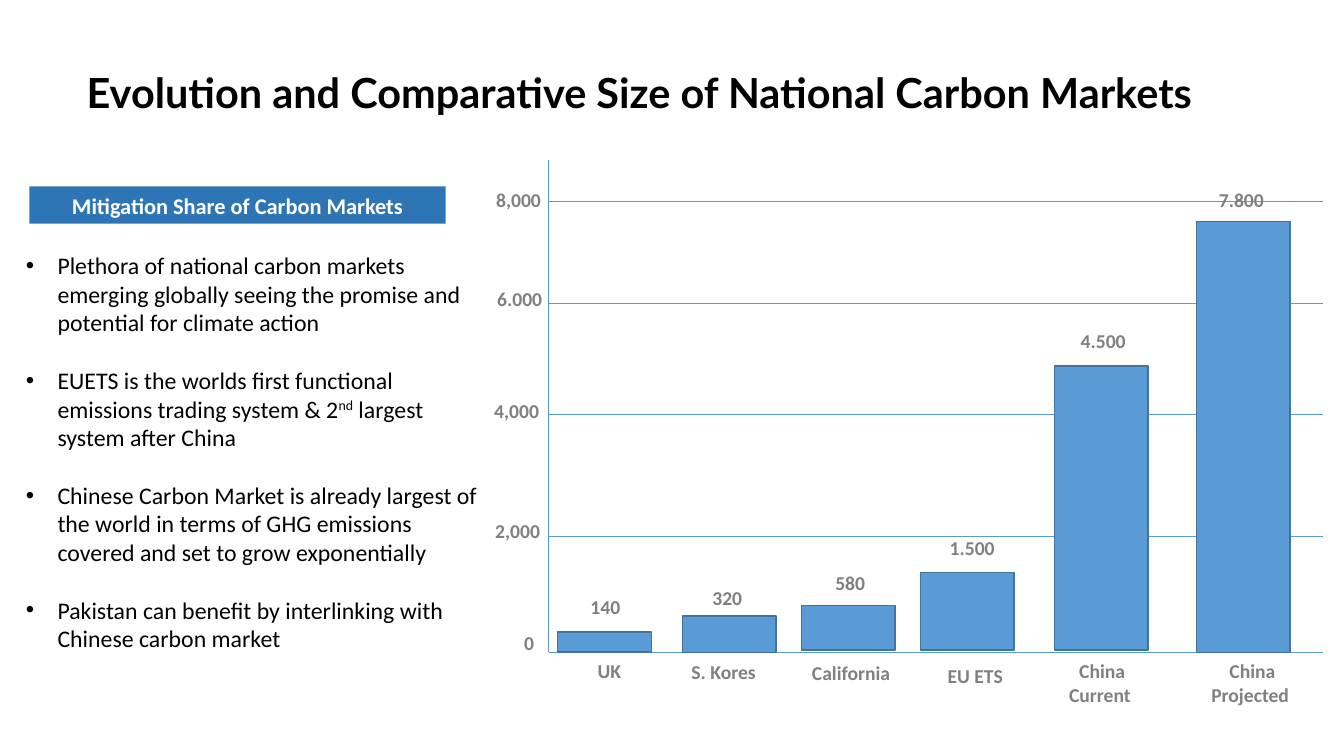
from lxml import etree
from pptx import Presentation
from pptx.dml.color import RGBColor
from pptx.enum.shapes import MSO_CONNECTOR as CONN, MSO_SHAPE as SHAPE
from pptx.enum.text import MSO_ANCHOR as ANCHOR, PP_ALIGN as ALIGN
from pptx.oxml.ns import qn
from pptx.util import Pt

COLORS = {"black": "000000", "white": "FFFFFF", "gray": "808080",
          "bar": "5B9BD5", "bar_edge": "43739E", "banner": "2E75B6"}

TITLE = dict(name="Lato", size=Pt(29.6), bold=True)
LABEL = dict(name="Calibri", size=Pt(14), bold=True)
BANNER = dict(name="Calibri", size=Pt(16), bold=True)
BODY = dict(name="Calibri", size=Pt(17), bold=False)

# label, gridline y, label centre x, label top; relative to the chart box
TICKS = [("0", 352, -14, 333), ("2,000", 269, -22.3, 253.2),
         ("4,000", 182, -23, 167.5), ("6.000", 102.7, -20.8, 87.6),
         ("8,000", 30, -21.6, 17)]

# name, value, bar (left, top, height), value (shift, top), name (shift, top, width);
# shifts are from the middle of the bar
BAR_W = 67
BARS = [
    ("UK", "140", (6.2, 337.4, 14.4), (0.7, 307.2), (3.5, 353.3, 65.5)),
    ("S. Kores", "320", (95.4, 326, 26), (-1.4, 300.7), (-4, 354, 108)),
    ("California", "580", (180.4, 318.7, 31.7), (1.4, 290.6), (2, 354.7, 93)),
    ("EU ETS", "1.500", (265.4, 295, 55.4), (3.5, 265.4), (5.7, 356.9, 65.5)),
    ("China Current ", "4.500", (361.1, 147.4, 203), (1.4, 117.1), (0.7, 353.3, 93)),
    ("China Projected ", "7.800", (462.6, 44.4, 307.6), (-1.4, 17), (6.5, 353.3, 93)),
]

# each bullet is a list of (text, superscript) runs
BULLETS = [
    [("Plethora of national carbon markets emerging globally seeing the promise "
      "and potential for climate action", False)],
    [("EUETS is the worlds first functional emissions trading system & 2", False),
     ("nd", True), (" largest system after China", False)],
    [("Chinese Carbon Market is already largest of the world in terms of GHG "
      "emissions covered and set to grow exponentially", False)],
    [("Pakistan can benefit by interlinking with Chinese carbon market", False)],
]


def rgb(key):
    return RGBColor.from_string(COLORS[key])


def points(*lengths):
    return [Pt(v) for v in lengths]


def style(font, color, fmt):
    for key, value in fmt.items():
        setattr(font, key, value)
    font.color.rgb = rgb(color)


def add_label(slide, text, center, top, width):
    """Gray one-paragraph text centred on a given x."""
    sp = slide.shapes.add_textbox(*points(center - width / 2, top, width, 24.3))
    tf = sp.text_frame
    tf.word_wrap = True
    p = tf.paragraphs[0]
    p.text, p.alignment = text, ALIGN.CENTER
    style(p.runs[0].font, "gray", LABEL)


def add_line(slide, x1, y1, x2, y2):
    line = slide.shapes.add_connector(CONN.STRAIGHT, *points(x1, y1, x2, y2))
    line.line.color.rgb = rgb("bar")
    line.line.width = Pt(0.5)
    etree.SubElement(line._element.spPr, qn("a:effectLst"))


def add_rect(slide, box, fill, edge=None):
    sp = slide.shapes.add_shape(SHAPE.RECTANGLE, *points(*box))
    sp.shadow.inherit = False
    sp.fill.solid()
    sp.fill.fore_color.rgb = rgb(fill)
    if edge:
        sp.line.color.rgb = rgb(edge)
        sp.line.width = Pt(1)
    else:
        sp.line.fill.background()
    return sp


def add_title(slide, x, y, w, h):
    sp = slide.shapes.title
    sp.left, sp.top, sp.width, sp.height = points(x, y, w, h)
    tf = sp.text_frame
    frame = dict(word_wrap=True, vertical_anchor=ANCHOR.BOTTOM, margin_top=0,
                 margin_bottom=0, margin_left=Pt(7.2), margin_right=Pt(7.2))
    for key, value in frame.items():
        setattr(tf, key, value)
    p = tf.paragraphs[0]
    p.text = "Evolution and Comparative Size of National Carbon Markets"
    p.alignment, p.line_spacing = ALIGN.LEFT, 0.9
    style(p.runs[0].font, "black", TITLE)


def add_bar_chart(slide, x, y, w, h):
    """Bars drawn to an uneven scale, so each keeps its own place in the box."""
    add_line(slide, x, y, x, y + h)
    for text, line_y, center, top in TICKS:
        add_line(slide, x, y + line_y, x + w, y + line_y)
        add_label(slide, text, x + center, y + top, 57)
    for name, value, bar, value_at, name_at in BARS:
        left, top, height = bar
        add_rect(slide, (x + left, y + top, BAR_W, height), "bar", "bar_edge")
        middle = x + left + BAR_W / 2
        add_label(slide, value, middle + value_at[0], y + value_at[1], 65.5)
        add_label(slide, name, middle + name_at[0], y + name_at[1], name_at[2])


def add_banner(slide, *box):
    sp = add_rect(slide, box, "banner")
    sp.text_frame.word_wrap = True
    p = sp.text_frame.paragraphs[0]
    p.text, p.alignment = "Mitigation Share of Carbon Markets", ALIGN.CENTER
    style(p.runs[0].font, "white", BANNER)


def add_bullets(slide, *box):
    tf = slide.shapes.add_textbox(*points(*box)).text_frame
    tf.word_wrap = True
    for i, runs in enumerate(BULLETS):
        p = tf.paragraphs[0] if i == 0 else tf.add_paragraph()
        p.space_before = Pt(20.75 if i else 0)
        pPr = p._p.get_or_add_pPr()
        pPr.set("marL", str(Pt(22.5)))
        pPr.set("indent", str(-Pt(22.5)))
        etree.SubElement(pPr, qn("a:buFont"), typeface="Arial")
        etree.SubElement(pPr, qn("a:buChar"), char="•")
        for text, raised in runs:
            r = p.add_run()
            r.text = text
            style(r.font, "black", BODY)
            if raised:
                r._r.get_or_add_rPr().set("baseline", "30000")


def main():
    prs = Presentation()
    prs.slide_width, prs.slide_height = points(960, 540)
    slide = prs.slides.add_slide(prs.slide_layouts.get_by_name("Title Only"))
    add_title(slide, 54.7, 39.6, 862, 44)
    add_bar_chart(slide, 392, 114, 553, 352)
    add_banner(slide, 21, 133.2, 297.4, 26.6)
    add_bullets(slide, 11.5, 175.7, 345.6, 296)
    prs.save("out.pptx")


if __name__ == "__main__":
    main()
